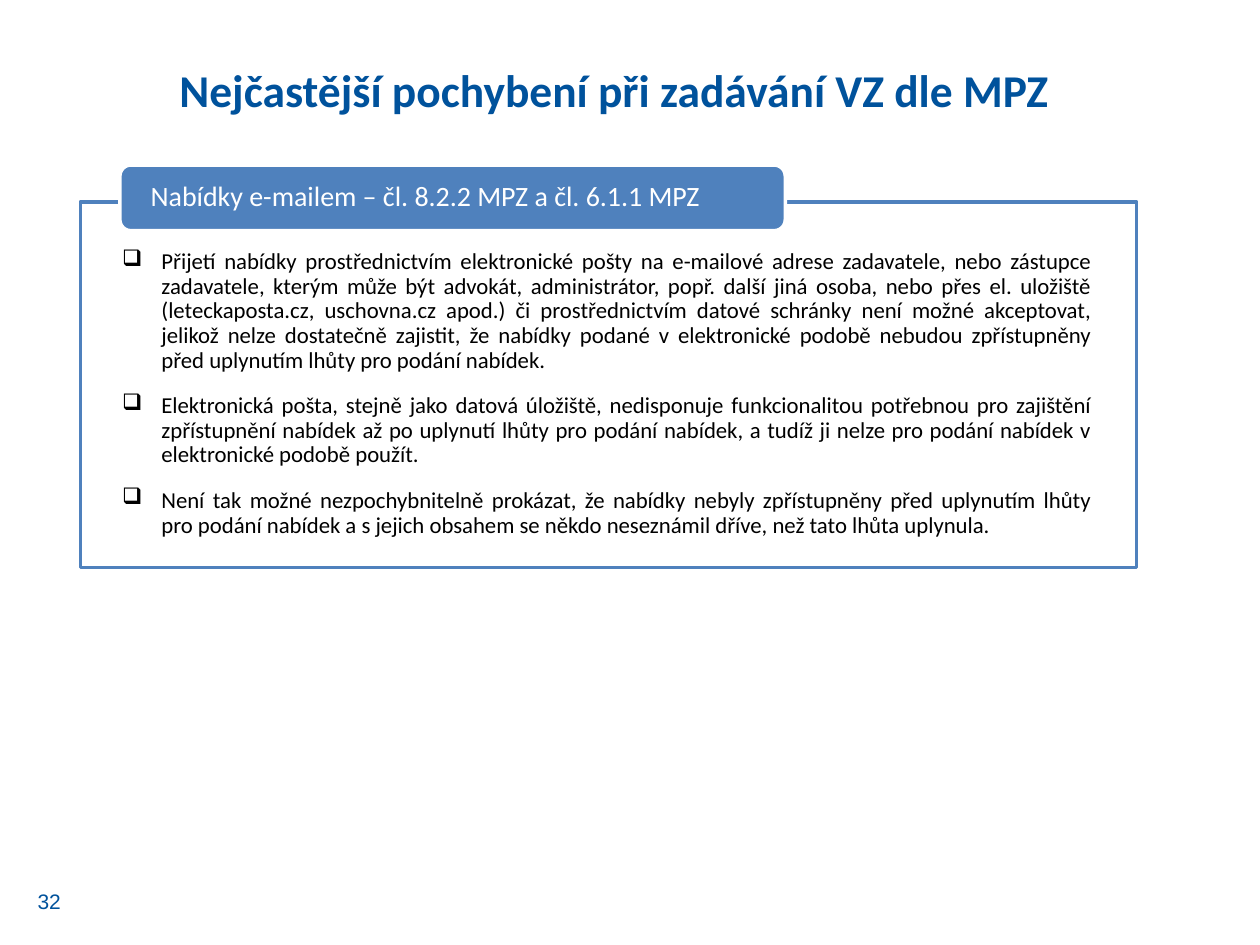
from lxml import etree
from pptx import Presentation
from pptx import util as u
from pptx.dml.color import RGBColor
from pptx.enum import shapes, text
from pptx.oxml.ns import qn

Pt = u.Pt
NAVY = RGBColor(0x00, 0x52, 0x9C)
BLUE = RGBColor(0x4F, 0x81, 0xBD)
WHITE = RGBColor(0xFF, 0xFF, 0xFF)
BLACK = RGBColor(0x00, 0x00, 0x00)

TITLE = "Nejčastější pochybení při zadávání VZ dle MPZ"
LABEL = "Nabídky e-mailem – čl. 8.2.2 MPZ a čl. 6.1.1 MPZ"
POINTS = [
    "Přijetí nabídky prostřednictvím elektronické pošty na e-mailové adrese zadavatele, "
    "nebo zástupce zadavatele, kterým může být advokát, administrátor, popř. další jiná "
    "osoba, nebo přes el. uložiště (leteckaposta.cz, uschovna.cz apod.) či prostřednictvím "
    "datové schránky není možné akceptovat, jelikož nelze dostatečně zajistit, že nabídky "
    "podané v elektronické podobě nebudou zpřístupněny před uplynutím lhůty pro podání nabídek.",
    "Elektronická pošta, stejně jako datová úložiště, nedisponuje funkcionalitou potřebnou "
    "pro zajištění zpřístupnění nabídek až po uplynutí lhůty pro podání nabídek, a tudíž ji "
    "nelze pro podání nabídek v elektronické podobě použít.",
    "Není tak možné nezpochybnitelně prokázat, že nabídky nebyly zpřístupněny před uplynutím "
    "lhůty pro podání nabídek a s jejich obsahem se někdo neseznámil dříve, než tato lhůta uplynula.",
]


def style_font(font, name, size, color, bold=False):
    """Set the face, size, colour and weight of a font."""
    font.name, font.size, font.bold = name, Pt(size), bold
    font.color.rgb = color


def set_frame(frame, anchor, insets):
    """Wrap a text frame, anchor it and set left, top, right and bottom insets."""
    frame.word_wrap = True
    frame.vertical_anchor = anchor
    frame.margin_left, frame.margin_top, frame.margin_right, frame.margin_bottom = map(Pt, insets)


def add_line_of_text(page, box, content, align, anchor, *font_style):
    """Add a text box with a single paragraph."""
    frame = page.shapes.add_textbox(*map(Pt, box)).text_frame
    set_frame(frame, anchor, (7.2, 3.6, 7.2, 3.6))
    frame.text = content
    para = frame.paragraphs[0]
    para.alignment = align
    style_font(para.runs[0].font, *font_style)


def add_panel(page, kind, box, fill, line):
    """Add a flat preset shape with a solid fill and outline."""
    panel = page.shapes.add_shape(kind, *map(Pt, box))
    panel.shadow.inherit = False
    panel.fill.solid()
    panel.fill.fore_color.rgb = fill
    panel.line.color.rgb = line
    panel.line.width = Pt(2)
    return panel


def add_bullet(para, symbol, indent):
    """Give a paragraph a hanging bullet."""
    props = para._p.get_or_add_pPr()
    props.set("marL", str(Pt(indent)))
    props.set("indent", str(-Pt(indent)))
    etree.SubElement(props, qn("a:buChar")).set("char", symbol)


def add_labelled_list(page, box, label, points):
    """Place a framed bullet list with a label tab across its top edge."""
    left, top, width, height = box
    panel = add_panel(page, shapes.MSO_SHAPE.RECTANGLE, box, WHITE, BLUE)
    color = panel.fill._xPr.find(qn("a:solidFill"))[0]
    etree.SubElement(color, qn("a:alpha")).set("val", "90000")
    frame = panel.text_frame
    set_frame(frame, text.MSO_ANCHOR.TOP, (23.75, 27.5, 26.5, 6.5))
    frame.text = "\n".join(points)
    for index, para in enumerate(frame.paragraphs):
        add_bullet(para, "❑", 22.5)
        para.alignment = text.PP_ALIGN.JUSTIFY
        para.line_spacing = 0.9
        para.space_before = Pt(12 if index else 0)
        style_font(para.runs[0].font, "Calibri", 13, BLACK)

    tab_box = (left + 22.5, top - 21, width * 0.63, 37.5)
    tab = add_panel(page, shapes.MSO_SHAPE.ROUNDED_RECTANGLE, tab_box, BLUE, WHITE)
    set_frame(tab.text_frame, text.MSO_ANCHOR.MIDDLE, (15.75, 0, 15.75, 0))
    tab.text_frame.text = label
    para = tab.text_frame.paragraphs[0]
    para.alignment = text.PP_ALIGN.LEFT
    para.line_spacing = 0.9
    style_font(para.runs[0].font, "Calibri", 16, WHITE)


def main():
    """Build the slide and save the deck."""
    deck = Presentation()
    deck.slide_width, deck.slide_height = Pt(720), Pt(540)
    page = deck.slides.add_slide(deck.slide_layouts[6])
    add_line_of_text(page, (14.4, 500.4, 39.6, 28.8), "32", text.PP_ALIGN.LEFT,
                     text.MSO_ANCHOR.MIDDLE, "Arial", 12, NAVY)
    add_labelled_list(page, (46, 115.3, 603.5, 209), LABEL, POINTS)
    add_line_of_text(page, (38, 31.7, 626.5, 41), TITLE, text.PP_ALIGN.CENTER,
                     text.MSO_ANCHOR.TOP, "Calibri", 26, NAVY, True)
    deck.save("out.pptx")


if __name__ == "__main__":
    main()
